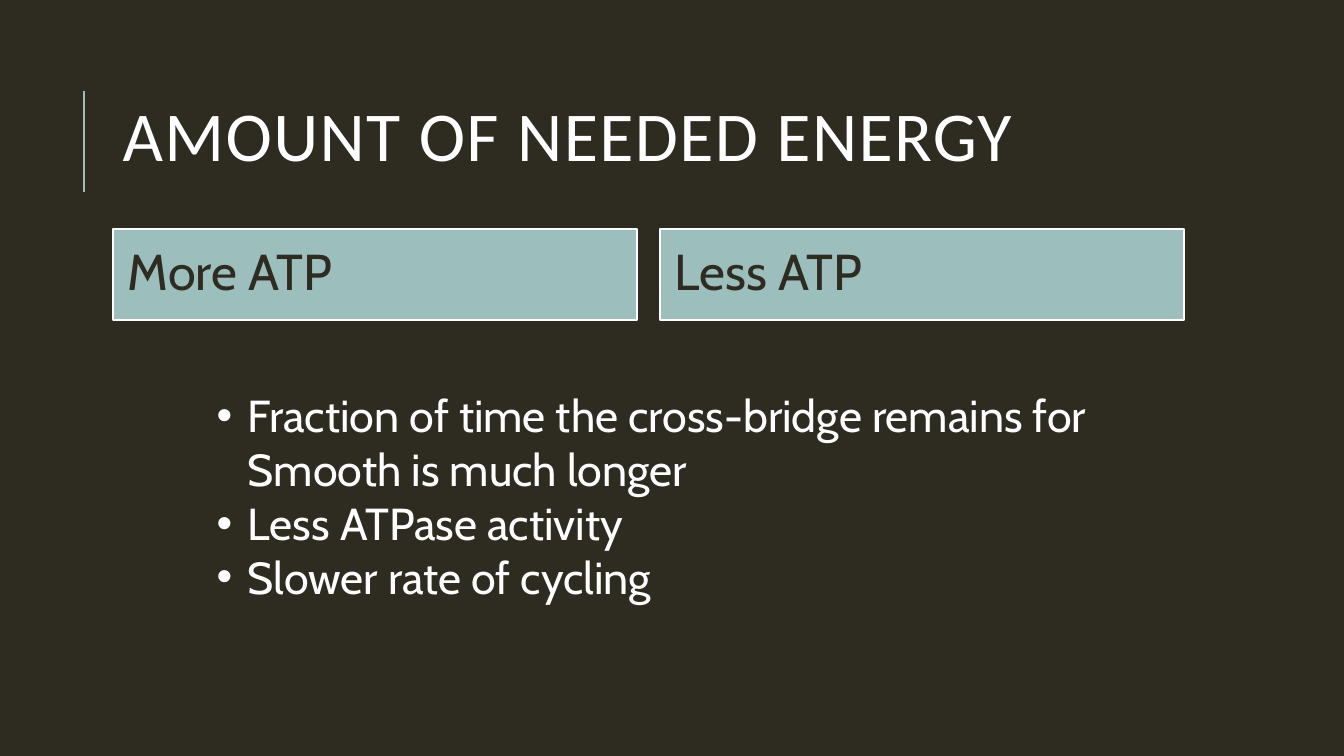
from pptx import Presentation
from pptx.dml.color import RGBColor
from pptx.enum.shapes import MSO_CONNECTOR, MSO_SHAPE
from pptx.enum.text import MSO_ANCHOR, PP_ALIGN
from pptx.oxml.ns import qn
from pptx.util import Cm, Pt
from lxml import etree

LINE = MSO_CONNECTOR.STRAIGHT
RECT = MSO_SHAPE.RECTANGLE
MIDDLE, TOP = MSO_ANCHOR.MIDDLE, MSO_ANCHOR.TOP
LEFT = PP_ALIGN.LEFT

# Content
TITLE = "AMOUNT OF NEEDED ENERGY"
HEADS = ["More ATP", "Less ATP"]
POINTS = [
    "Fraction of time the cross-bridge remains for Smooth is much longer",
    "Less ATPase activity",
    "Slower rate of cycling",
]


class Theme:
    dark = RGBColor(0x2E, 0x2B, 0x21)
    teal = RGBColor(0x9C, 0xBE, 0xBD)
    white = RGBColor(0xFF, 0xFF, 0xFF)
    title = ("Calibri", Pt(50), white)
    head = ("Cabin", Pt(36), dark)
    point = ("Cabin", Pt(32), white)
    stroke = Pt(1.5)


# Layout, in centimetres
EDGE = 2.84
RULE = (2.11, 2.29, 4.83)
HEAD_TOP, HEAD_W, HEAD_H, HEAD_GAP = 5.77, 13.21, 2.29, 0.58
INDENT = 0.79


def write(shape, lines, style, anchor, space, pad=0.25):
    frame = shape.text_frame
    frame.word_wrap = True
    frame.vertical_anchor = anchor
    frame.margin_left = frame.margin_right = Cm(pad)
    frame.margin_top = frame.margin_bottom = Cm(0.13)
    for i, line in enumerate(lines):
        para = frame.add_paragraph() if i else frame.paragraphs[0]
        para.alignment = LEFT
        para.line_spacing = space
        run = para.add_run()
        run.text = line
        run.font.name, run.font.size, run.font.color.rgb = style
    return frame.paragraphs


def add_box(slide, left, top, width, height):
    return slide.shapes.add_textbox(Cm(left), Cm(top), Cm(width), Cm(height))


def add_title(slide):
    box = add_box(slide, EDGE, 1.47, 27, 4.17)
    para = write(box, [TITLE], Theme.title, MIDDLE, 0.8)[0]
    para.runs[0].font._element.set("spc", "100")


def add_rule(slide):
    x, top, end = map(Cm, RULE)
    rule = slide.shapes.add_connector(LINE, x, end, x, top)
    rule.line.color.rgb = Theme.teal
    rule.line.width = Theme.stroke
    etree.SubElement(rule._element.spPr, qn("a:effectLst"))


def add_heads(slide):
    for i, text in enumerate(HEADS):
        left = EDGE + i * (HEAD_W + HEAD_GAP)
        head = slide.shapes.add_shape(
            RECT, Cm(left), Cm(HEAD_TOP), Cm(HEAD_W), Cm(HEAD_H))
        head.shadow.inherit = False
        head.fill.solid()
        head.fill.fore_color.rgb = Theme.teal
        head.line.color.rgb = Theme.white
        head.line.width = Theme.stroke
        write(head, [text], Theme.head, MIDDLE, 0.9, pad=0.38)


def add_points(slide):
    box = add_box(slide, 5.21, 9.65, 23.04, 5.74)
    for para in write(box, POINTS, Theme.point, TOP, 1.0):
        props = para._p.get_or_add_pPr()
        props.set("marL", str(Cm(INDENT)))
        props.set("indent", str(-Cm(INDENT)))
        etree.SubElement(props, qn("a:buFont"), typeface="Arial")
        etree.SubElement(props, qn("a:buChar"), char="•")


def main():
    deck = Presentation()
    deck.slide_width, deck.slide_height = Cm(33.87), Cm(19.05)
    slide = deck.slides.add_slide(deck.slide_layouts[6])
    slide.background.fill.solid()
    slide.background.fill.fore_color.rgb = Theme.dark
    add_rule(slide)
    add_title(slide)
    add_heads(slide)
    add_points(slide)
    deck.save("out.pptx")


if __name__ == "__main__":
    main()
